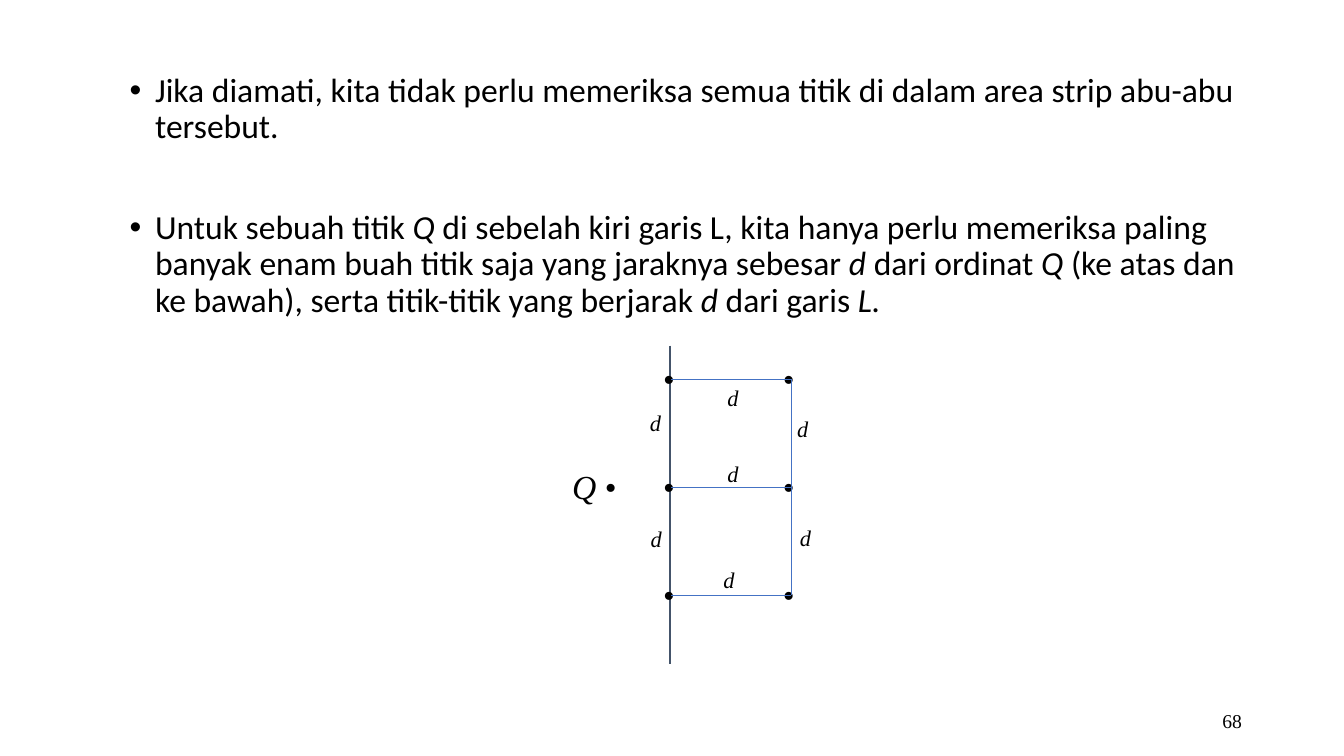
from pptx import Presentation
from pptx.dml.color import RGBColor
from pptx.enum.shapes import MSO_CONNECTOR
from pptx.enum.text import MSO_ANCHOR, MSO_AUTO_SIZE, PP_ALIGN
from pptx.oxml.ns import qn
from pptx.util import Cm, Pt
from lxml.etree import SubElement

COLORS = {"text": "000000", "divider": "44546A", "edge": "4472C4"}
SERIF = "Times New Roman"

# Geometry of the two stacked squares, in centimetres
LEFT, RIGHT = 16.92, 19.94
TOP, SIDE = 9.55, 2.72
DOT_LEFT, DOT_TOP, DOT_STEP = 16.46, 8.89, 3.02

# Each bullet is a list of (text, italic)
BULLETS = [
    [("Jika diamati, kita tidak perlu memeriksa semua titik di dalam area strip "
      "abu-abu tersebut.", False)],
    [("Untuk sebuah titik ", False), ("Q", True),
     (" di sebelah kiri garis L, kita hanya perlu memeriksa paling banyak enam buah "
      "titik saja yang jaraknya sebesar ", False), ("d ", True),
     ("dari ordinat ", False), ("Q", True),
     (" (ke atas dan ke bawah), serta titik-titik yang berjarak ", False),
     ("d ", True), ("dari garis ", False), ("L.", True)],
]

# Left and top of each distance label
DISTANCE_LABELS = [(18.08, 9.55), (19.84, 10.34), (18.08, 11.46), (19.91, 13.08),
                   (17.98, 14.15), (16.15, 13.11), (16.13, 10.19)]


def color(name):
    return RGBColor.from_string(COLORS[name])


def set_font(para, name, size):
    para.font.name = name
    para.font.size = Pt(size)
    para.font.color.rgb = color("text")


def add_spans(para, spans):
    for text, italic in spans:
        span = para.add_run()
        span.text = text
        span.font.italic = italic


def add_bullets(page, left, top, width, height):
    box = page.shapes.add_textbox(Cm(left), Cm(top), Cm(width), Cm(height))
    frame = box.text_frame
    frame.word_wrap = True
    for index, spans in enumerate(BULLETS):
        para = frame.add_paragraph() if index else frame.paragraphs[0]
        properties = para._p.get_or_add_pPr()
        properties.set("marL", str(Cm(0.64)))
        properties.set("indent", str(-Cm(0.64)))
        SubElement(properties, qn("a:buFont"), typeface="Arial")
        SubElement(properties, qn("a:buChar"), char="•")
        para.line_spacing = 0.9
        para.space_before = Pt(46 if index else 0)
        set_font(para, "Calibri", 24)
        add_spans(para, spans)


def add_label(page, spans, left, top, width, height, size, wrap=False):
    box = page.shapes.add_textbox(Cm(left), Cm(top), Cm(width), Cm(height))
    frame = box.text_frame
    frame.word_wrap = wrap
    frame.auto_size = MSO_AUTO_SIZE.SHAPE_TO_FIT_TEXT
    para = frame.paragraphs[0]
    set_font(para, SERIF, size)
    add_spans(para, spans)


def add_line(page, start, end, name, weight):
    line = page.shapes.add_connector(
        MSO_CONNECTOR.STRAIGHT, *[Cm(value) for value in (*start, *end)])
    line.line.color.rgb = color(name)
    line.line.width = Pt(weight)
    SubElement(line._element.spPr, qn("a:effectLst"))


def add_page_number(page, number):
    box = page.shapes.add_textbox(Cm(23.93), Cm(17.65), Cm(7.62), Cm(1.02))
    frame = box.text_frame
    frame.word_wrap = True
    frame.vertical_anchor = MSO_ANCHOR.MIDDLE
    para = frame.paragraphs[0]
    para.text = number
    para.alignment = PP_ALIGN.RIGHT
    set_font(para, SERIF, 14)


def main():
    deck = Presentation()
    deck.slide_width, deck.slide_height = Cm(33.87), Cm(19.05)
    page = deck.slides.add_slide(deck.slide_layouts[6])

    add_bullets(page, 3.02, 1.73, 29.16, 15.04)
    add_page_number(page, "68")

    # Dividing line L and point Q
    add_line(page, (16.89, 8.71), (16.89, 16.74), "divider", 1.75)
    add_label(page, [("Q ", True), ("•", False)], 14.17, 11.61, 1.73, 1.27, 24)

    # Six points at the corners of the squares
    for row in range(3):
        for column in range(2):
            add_label(page, [("•", False)], DOT_LEFT + column * DOT_STEP,
                      DOT_TOP + row * SIDE, 0.94, 1.32, 24, wrap=True)

    # Edges of the squares
    for row in range(3):
        height = TOP + row * SIDE
        add_line(page, (LEFT, height), (RIGHT, height), "edge", 0.5)
    add_line(page, (RIGHT, TOP), (RIGHT, TOP + 2 * SIDE), "edge", 0.5)

    # Distances
    for left, top in DISTANCE_LABELS:
        add_label(page, [("d", True)], left, top, 0.79, 0.94, 16)

    deck.save("out.pptx")


if __name__ == "__main__":
    main()
